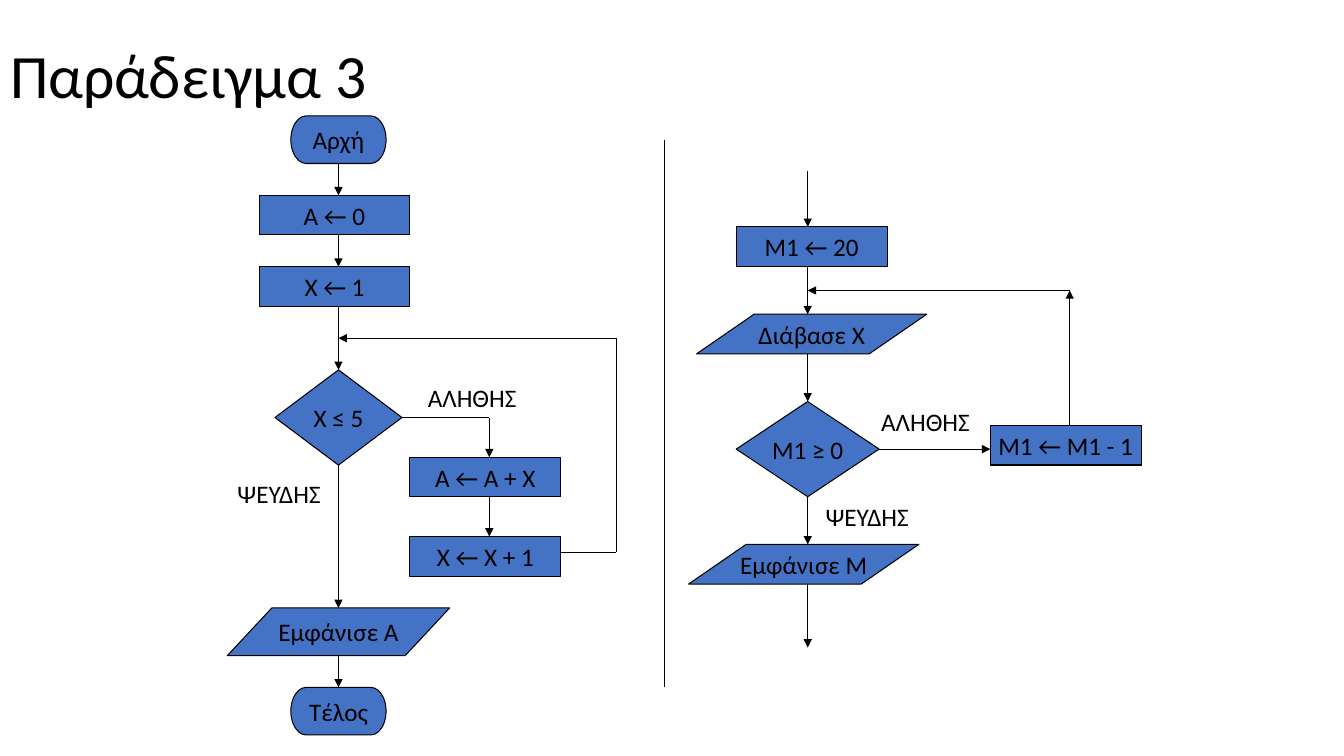
from lxml import etree
from pptx import Presentation
from pptx.dml.color import RGBColor
from pptx.enum.shapes import MSO_CONNECTOR, MSO_SHAPE
from pptx.enum.text import MSO_ANCHOR, MSO_AUTO_SIZE, PP_ALIGN
from pptx.oxml.ns import qn
from pptx.util import Inches, Mm, Pt

TERMINATOR = MSO_SHAPE.FLOWCHART_TERMINATOR
PROCESS = MSO_SHAPE.FLOWCHART_PROCESS
DECISION = MSO_SHAPE.FLOWCHART_DECISION
DATA = MSO_SHAPE.FLOWCHART_DATA
PARALLELOGRAM = MSO_SHAPE.PARALLELOGRAM
STRAIGHT = MSO_CONNECTOR.STRAIGHT
LEFT, CENTER, RIGHT = PP_ALIGN.LEFT, PP_ALIGN.CENTER, PP_ALIGN.RIGHT
MIDDLE = MSO_ANCHOR.MIDDLE
TOP_SITE, BOTTOM_SITE, RIGHT_SITE = 0, 2, 3

FONT = "Calibri"
BLACK, BLUE = "000000", "4472C4"
GRID = Mm(2)  # all flowchart lengths are columns and rows of this size
BOX_WIDTH, BOX_HEIGHT = 19, 5


def color(hex_code):
    return RGBColor.from_string(hex_code)


def format_text(paragraph, size, alignment):
    paragraph.alignment = alignment
    paragraph.font.name = FONT
    paragraph.font.size = Pt(size)
    paragraph.font.color.rgb = color(BLACK)


def draw_line(shapes, start, end, arrow=True):
    connector = shapes.add_connector(STRAIGHT, *start, *end)
    connector.line.color.rgb = color(BLACK)
    connector.line.width = Pt(0.75)
    if arrow:
        outline = connector.line._get_or_add_ln()
        etree.SubElement(outline, qn("a:tailEnd"), type="triangle")
    properties = connector._element.spPr
    etree.SubElement(properties, qn("a:effectLst"))
    return connector


class Flowchart:
    """A group of symbols placed by column and row from a top left corner."""

    def __init__(self, slide, left, top):
        self.shapes = slide.shapes.add_group_shape().shapes
        self.left, self.top = Inches(left), Inches(top)

    def point(self, column, row):
        return self.left + round(column * GRID), self.top + round(row * GRID)

    def symbol(self, kind, text, column, row, width=BOX_WIDTH, height=BOX_HEIGHT):
        shape = self.shapes.add_shape(
            kind, *self.point(column, row), width * GRID, height * GRID)
        shape.shadow.inherit = False
        shape.fill.solid()
        shape.fill.fore_color.rgb = color(BLUE)
        shape.line.color.rgb = color(BLACK)
        shape.line.width = Pt(0.75)
        if kind == PARALLELOGRAM:
            shape.adjustments[0] = 1.45
        frame = shape.text_frame
        frame.word_wrap = False
        frame.vertical_anchor = MIDDLE
        frame.text = text
        format_text(frame.paragraphs[0], 18, CENTER)
        return shape

    def label(self, text, column, row, width, alignment=LEFT):
        box = self.shapes.add_textbox(
            *self.point(column, row), width * GRID, 5 * GRID)
        frame = box.text_frame
        frame.word_wrap = True
        frame.text = text
        format_text(frame.paragraphs[0], 18, alignment)

    def route(self, *corners, arrow=True):
        """Join the corners in turn, with an arrowhead at the last one."""
        lines = []
        for index, (start, end) in enumerate(zip(corners, corners[1:])):
            is_last = index == len(corners) - 2
            lines.append(draw_line(self.shapes, self.point(*start),
                                   self.point(*end), arrow and is_last))
        return lines


def add_title(slide, text):
    title = slide.shapes.title
    title.left, title.top = 0, Inches(0.05)
    title.width, title.height = Inches(11.5), Inches(1.45)
    frame = title.text_frame
    frame.auto_size = MSO_AUTO_SIZE.NONE
    frame.vertical_anchor = MIDDLE
    frame.text = text
    frame.paragraphs[0].line_spacing = 0.9
    format_text(frame.paragraphs[0], 44, LEFT)


def add_sum_flowchart(slide, left, top):
    chart = Flowchart(slide, left, top)
    axis, branch, loop = 18, 37, 53
    start = chart.symbol(TERMINATOR, "Αρχή", axis - 6, 0, 12, 6)
    chart.symbol(PROCESS, "Α ← 0", 8, 10)
    chart.symbol(PROCESS, "X ← 1", 8, 19)
    test = chart.symbol(DECISION, "X ≤ 5", axis - 8, 32, 16, 12)
    chart.symbol(PROCESS, "Α ← Α + Χ", 27, 43)
    chart.symbol(PROCESS, "Χ ← Χ + 1", 27, 53)
    chart.symbol(DATA, "Εμφάνισε Α", axis - 14, 62, 28, 6)
    finish = chart.symbol(TERMINATOR, "Τέλος", axis - 6, 72, 12, 6)

    chart.route((axis, 6), (axis, 10))[0].begin_connect(start, BOTTOM_SITE)
    chart.route((axis, 15), (axis, 19))
    chart.route((axis, 24), (axis, 32))[0].end_connect(test, TOP_SITE)
    chart.route((axis, 44), (axis, 62))[0].begin_connect(test, BOTTOM_SITE)
    chart.route((axis, 68), (axis, 72))[0].end_connect(finish, TOP_SITE)
    true_path = chart.route((26, 38), (branch, 38), (branch, 43))
    true_path[0].begin_connect(test, RIGHT_SITE)
    chart.route((branch, 48), (branch, 53))
    chart.route((46, 55), (loop, 55), (loop, 28), (axis, 28))
    chart.label("ΑΛΗΘΗΣ", 28, 33, 18)
    chart.label("ΨΕΥΔΗΣ", 0, 45, 17, RIGHT)


def add_countdown_flowchart(slide, left, top):
    chart = Flowchart(slide, left, top)
    axis, loop = 15, 48
    chart.symbol(PROCESS, "Μ1 ← 20", 6, 7)
    chart.symbol(PARALLELOGRAM, "Διάβασε Χ", 1, 18, 29)
    test = chart.symbol(DECISION, "Μ1 ≥ 0", axis - 9, 29, 18, 12)
    chart.symbol(PROCESS, "Μ1 ← Μ1 - 1", 38, 32)
    chart.symbol(PARALLELOGRAM, "Εμφάνισε Μ", 0, 47, 29)

    for first_row, last_row in ((0, 7), (12, 18), (52, 60)):
        chart.route((axis, first_row), (axis, last_row))
    chart.route((axis, 23), (axis, 29))[0].end_connect(test, TOP_SITE)
    chart.route((axis, 41), (axis, 47))[0].begin_connect(test, BOTTOM_SITE)
    chart.route((24, 35), (38, 35))[0].begin_connect(test, RIGHT_SITE)
    chart.route((loop, 32), (loop, 15))
    chart.route((loop, 15), (axis, 15))
    chart.label("ΑΛΗΘΗΣ", 23, 29, 16)
    chart.label("ΨΕΥΔΗΣ", 16, 41, 16)


def main():
    presentation = Presentation()
    presentation.slide_width = Inches(13.33)
    presentation.slide_height = Inches(7.5)
    slide = presentation.slides.add_slide(presentation.slide_layouts[5])
    add_title(slide, "Παράδειγμα 3")
    add_sum_flowchart(slide, 1.94, 1.15)
    add_countdown_flowchart(slide, 6.83, 1.7)
    draw_line(slide.shapes, (Inches(6.59), Inches(1.39)),
              (Inches(6.59), Inches(6.82)), arrow=False)
    presentation.save("out.pptx")


if __name__ == "__main__":
    main()
